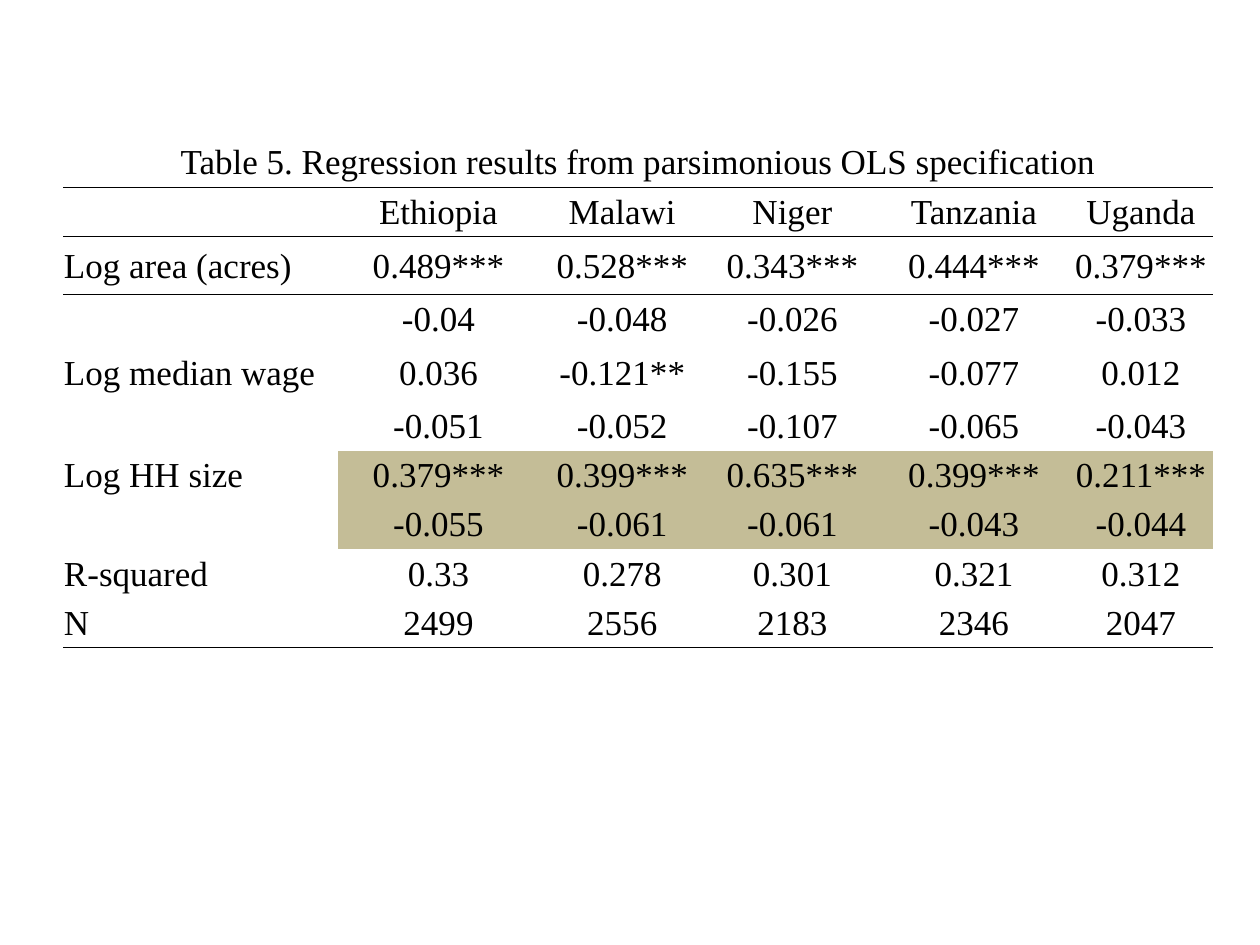
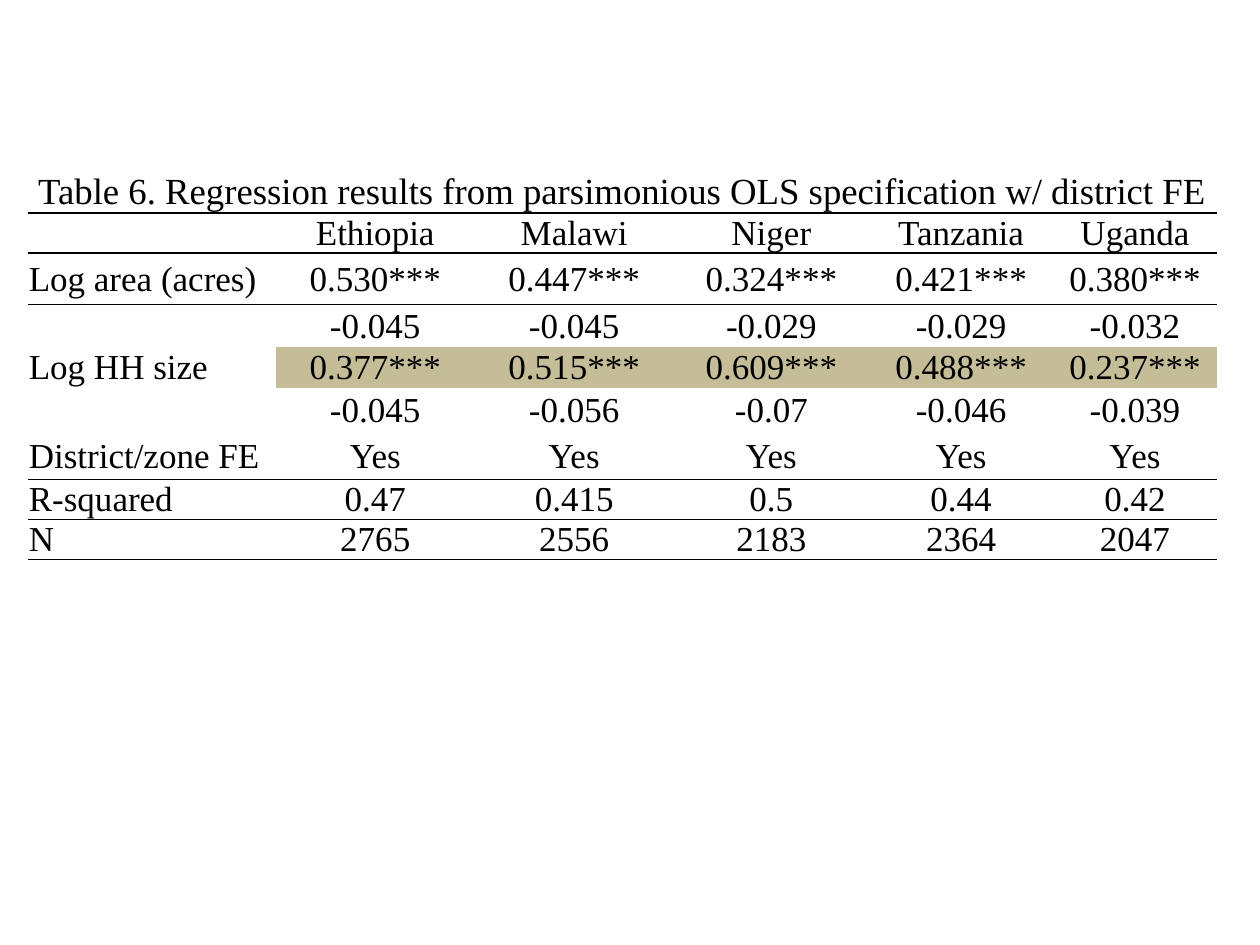
"""Build two slides of regression tables with a shared journal style."""
from lxml.etree import SubElement
from pptx import Presentation
from pptx.dml.color import RGBColor
from pptx.enum.text import MSO_ANCHOR, PP_ALIGN
from pptx.oxml.ns import qn
from pptx.util import Cm, Pt

COLORS = {"ink": "000000", "highlight": "C4BD97"}
FONT = "Times New Roman"
BODY_SIZE = 20
RULE_WIDTH = 1
NO_STYLE = "{2D5ABB26-0587-4C30-8999-92F81FD0307C}"
COUNTRIES = ("", "Ethiopia", "Malawi", "Niger", "Tanzania", "Uganda")

TABLES = [
    {
        "title": "Table 5. Regression results from parsimonious OLS specification",
        "title_size": 20,
        "left": 1.27,
        "top": 2.74,
        "widths": (5.54, 4.06, 3.35, 3.51, 3.81, 2.92),
        "heights": (1.04, 0.99, 1.17, 0.99, 1.17, 0.99, 0.99, 0.99, 0.99, 0.99),
        "rows": [
            ("Log area (acres)", "0.489***", "0.528***", "0.343***", "0.444***", "0.379***"),
            ("", "-0.04", "-0.048", "-0.026", "-0.027", "-0.033"),
            ("Log median wage", "0.036", "-0.121**", "-0.155", "-0.077", "0.012"),
            ("", "-0.051", "-0.052", "-0.107", "-0.065", "-0.043"),
            ("Log HH size", "0.379***", "0.399***", "0.635***", "0.399***", "0.211***"),
            ("", "-0.055", "-0.061", "-0.061", "-0.043", "-0.044"),
            ("R-squared", "0.33", "0.278", "0.301", "0.321", "0.312"),
            ("N", "2499", "2556", "2183", "2346", "2047"),
        ],
        "highlighted": (6, 7),
        "ruled_below": (0, 1, 9),
    },
    {
        "title": "Table 6. Regression results from parsimonious OLS specification w/ district FE",
        "title_size": 21,
        "left": 0.56,
        "top": 3.45,
        "widths": (5, 4.01, 4.01, 3.94, 3.71, 3.3),
        "heights": (0.84, 0.81, 1.04, 0.86, 0.81, 0.91, 0.94, 0.81, 0.81),
        "rows": [
            ("Log area (acres)", "0.530***", "0.447***", "0.324***", "0.421***", "0.380***"),
            ("", "-0.045", "-0.045", "-0.029", "-0.029", "-0.032"),
            ("Log HH size", "0.377***", "0.515***", "0.609***", "0.488***", "0.237***"),
            ("", "-0.045", "-0.056", "-0.07", "-0.046", "-0.039"),
            ("District/zone FE",) + ("Yes",) * 5,
            ("R-squared", "0.47", "0.415", "0.5", "0.44", "0.42"),
            ("N", "2765", "2556", "2183", "2364", "2047"),
        ],
        "highlighted": (4,),
        "ruled_below": (0, 1, 6, 8),
    },
]


def write_text(cell, text, size=BODY_SIZE, align=PP_ALIGN.CENTER):
    cell.vertical_anchor = MSO_ANCHOR.MIDDLE
    cell.margin_left = cell.margin_right = cell.margin_top = Cm(0.02)
    cell.margin_bottom = 0
    if not text:
        return
    para = cell.text_frame.paragraphs[0]
    para.alignment = align
    span = para.add_run()
    span.text = text
    span.font.name = FONT
    span.font.size = Pt(size)
    span.font.color.rgb = RGBColor.from_string(COLORS["ink"])


def draw_rule(cell, side):
    properties = cell._tc.get_or_add_tcPr()
    line = SubElement(properties, qn(f"a:ln{side}"), w=str(Pt(RULE_WIDTH)))
    fill = SubElement(line, qn("a:solidFill"))
    SubElement(fill, qn("a:srgbClr"), val=COLORS["ink"])


def style_cell(cell, ruled_above, ruled_below, highlighted):
    if ruled_above:
        draw_rule(cell, "T")
    if ruled_below:
        draw_rule(cell, "B")
    if highlighted:
        cell.fill.solid()
        cell.fill.fore_color.rgb = RGBColor.from_string(COLORS["highlight"])
    else:
        cell.fill.background()


def add_regression_table(page, content):
    widths, heights = content["widths"], content["heights"]
    frame = page.shapes.add_table(
        len(heights), len(widths), Cm(content["left"]), Cm(content["top"]),
        Cm(sum(widths)), Cm(sum(heights)))
    next(frame.element.iter(qn("a:tableStyleId"))).text = NO_STYLE
    table = frame.table
    table.first_row = table.horz_banding = False
    for column, width in zip(table.columns, widths):
        column.width = Cm(width)
    for row, height in zip(table.rows, heights):
        row.height = Cm(height)

    title_row = (content["title"],) + ("",) * (len(widths) - 1)
    ruled = content["ruled_below"]
    for r, values in enumerate([title_row, COUNTRIES, *content["rows"]]):
        for c, value in enumerate(values):
            cell = table.cell(r, c)
            is_label = c == 0 and r > 0
            write_text(cell, value,
                       size=BODY_SIZE if r else content["title_size"],
                       align=PP_ALIGN.LEFT if is_label else PP_ALIGN.CENTER)
            style_cell(cell, r - 1 in ruled, r in ruled,
                       c > 0 and r in content["highlighted"])
    table.cell(0, 0).merge(table.cell(0, len(widths) - 1))


def main():
    deck = Presentation()
    deck.slide_width, deck.slide_height = Cm(25.4), Cm(19.05)
    blank = deck.slide_layouts.get_by_name("Blank")
    for content in TABLES:
        add_regression_table(deck.slides.add_slide(blank), content)
    deck.save("out.pptx")


if __name__ == "__main__":
    main()
